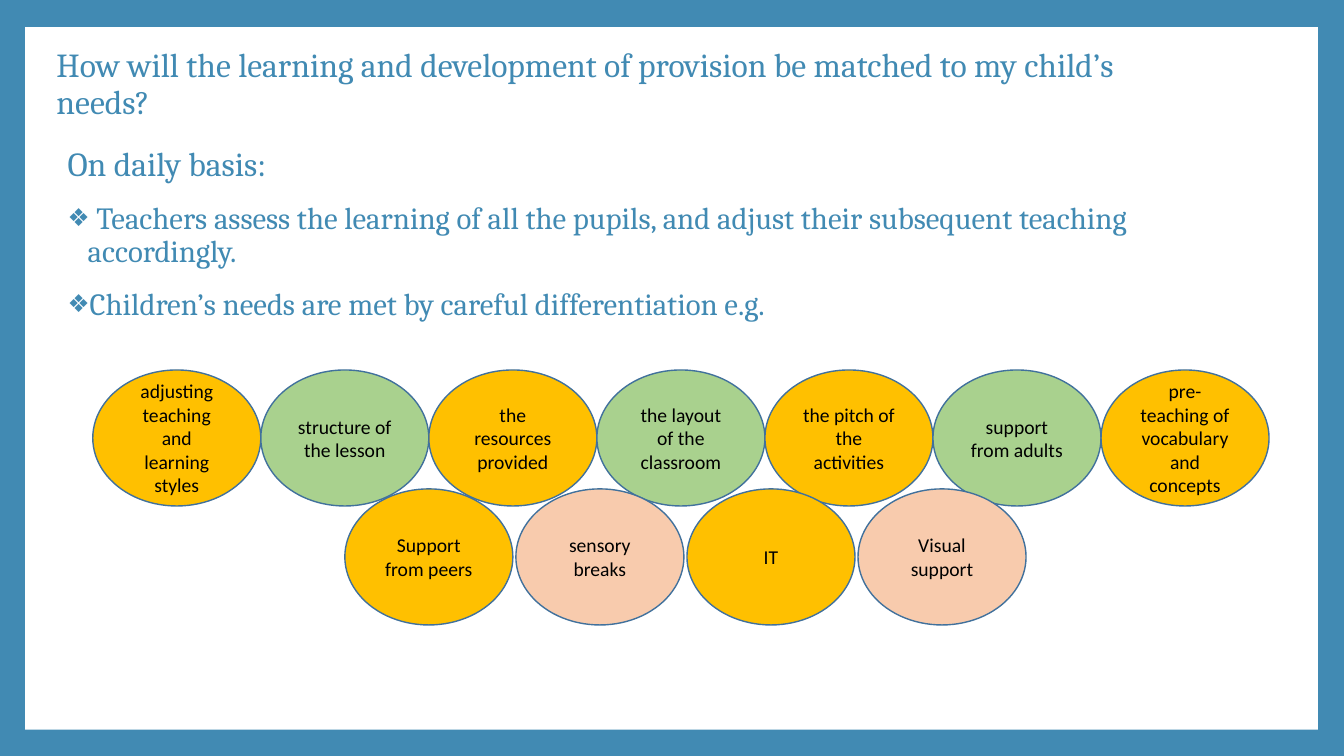
from lxml.etree import SubElement
from pptx import Presentation
from pptx.dml.color import RGBColor
from pptx.enum.shapes import MSO_SHAPE as SHAPE
from pptx.enum.text import MSO_ANCHOR as ANCHOR, MSO_AUTO_SIZE as AUTO_SIZE, PP_ALIGN as ALIGN
from pptx.oxml.ns import qn
from pptx.util import Inches, Pt

BLUE, WHITE, BLACK, OUTLINE = "418AB3", "FFFFFF", "000000", "41719C"
GOLD, GREEN, PEACH = "FFC000", "A9D18E", "F8CBAD"


def color(hex_code):
    return RGBColor.from_string(hex_code)


def style(paragraph, font_name, size, hex_code):
    for run in paragraph.runs:
        run.font.name = font_name
        run.font.size = Pt(size)
        run.font.color.rgb = color(hex_code)


prs = Presentation()
prs.slide_width, prs.slide_height = Inches(13.33), Inches(7.5)
slide = prs.slides.add_slide(prs.slide_layouts[1])
slide.background.fill.solid()
slide.background.fill.fore_color.rgb = color(BLUE)

# White panel inside the blue border, behind the text
panel = slide.shapes.add_shape(
    SHAPE.RECTANGLE, Inches(0.25), Inches(0.27), Inches(12.82), Inches(6.97))
panel.shadow.inherit = False
panel.fill.solid()
panel.fill.fore_color.rgb = color(WHITE)
panel.line.fill.background()
slide.shapes[0].element.addprevious(panel.element)

# Title
question = slide.shapes.title
question.left, question.top = Inches(0.46), Inches(0.12)
question.width, question.height = Inches(11.5), Inches(1.45)
question.text_frame.text = (
    "How will the learning and development of provision be matched to my child’s needs?")
question.text_frame.auto_size = AUTO_SIZE.NONE
question.text_frame.vertical_anchor = ANCHOR.MIDDLE
heading = question.text_frame.paragraphs[0]
heading.alignment = ALIGN.LEFT
heading.line_spacing = 0.9
style(heading, "Cambria", 24, BLUE)

# Daily practice: a lead line and two bullets
daily = slide.placeholders[1]
daily.left, daily.top = Inches(0.52), Inches(1.41)
daily.width, daily.height = Inches(11.5), Inches(5.57)
daily.text_frame.text = "\n".join([
    "On daily basis:",
    " Teachers assess the learning of all the pupils, and adjust their subsequent teaching accordingly.",
    "Children’s needs are met by careful differentiation e.g.",
])
daily.text_frame.auto_size = AUTO_SIZE.NONE
for index, paragraph in enumerate(daily.text_frame.paragraphs):
    is_bullet = index > 0
    props = paragraph._p.get_or_add_pPr()
    props.set("marL", str(Inches(0.25 if is_bullet else 0.05)))
    props.set("indent", str(Inches(-0.2 if is_bullet else 0)))
    if is_bullet:
        SubElement(SubElement(props, qn("a:buClr")), qn("a:srgbClr"), val=BLUE)
        SubElement(props, qn("a:buSzPct"), val="80000")
        SubElement(props, qn("a:buChar"), char="❖")
    else:
        SubElement(props, qn("a:buNone"))
    paragraph.line_spacing = 0.9
    paragraph.space_before = Pt(14 if is_bullet else 0)
    style(paragraph, "Cambria", 22 if is_bullet else 24, BLUE)

# Examples of differentiation: two rows of ovals with alternating fills
OVAL_WIDTH, OVAL_HEIGHT = 5 / 3, 1.35
example_rows = [
    (0.92, 3.67, 0, (GOLD, GREEN), [
        "adjusting teaching and learning styles", "structure of the lesson",
        "the resources provided", "the layout of the classroom",
        "the pitch of the activities", "support from adults",
        "pre-teaching of vocabulary and concepts"]),
    (3.42, 4.85, 0.03, (GOLD, PEACH), [
        "Support from peers", "sensory breaks", "IT", "Visual support"]),
]
for left, top, gap, fills, examples in example_rows:
    for column, example in enumerate(examples):
        oval = slide.shapes.add_shape(
            SHAPE.OVAL, Inches(left + column * (OVAL_WIDTH + gap)), Inches(top),
            Inches(OVAL_WIDTH), Inches(OVAL_HEIGHT))
        oval.shadow.inherit = False
        oval.fill.solid()
        oval.fill.fore_color.rgb = color(fills[column % 2])
        oval.line.color.rgb = color(OUTLINE)
        oval.line.width = Pt(1)
        frame = oval.text_frame
        frame.text = example
        frame.word_wrap = True
        frame.vertical_anchor = ANCHOR.MIDDLE
        frame.paragraphs[0].alignment = ALIGN.CENTER
        style(frame.paragraphs[0], "Calibri", 14, BLACK)

prs.save("out.pptx")
